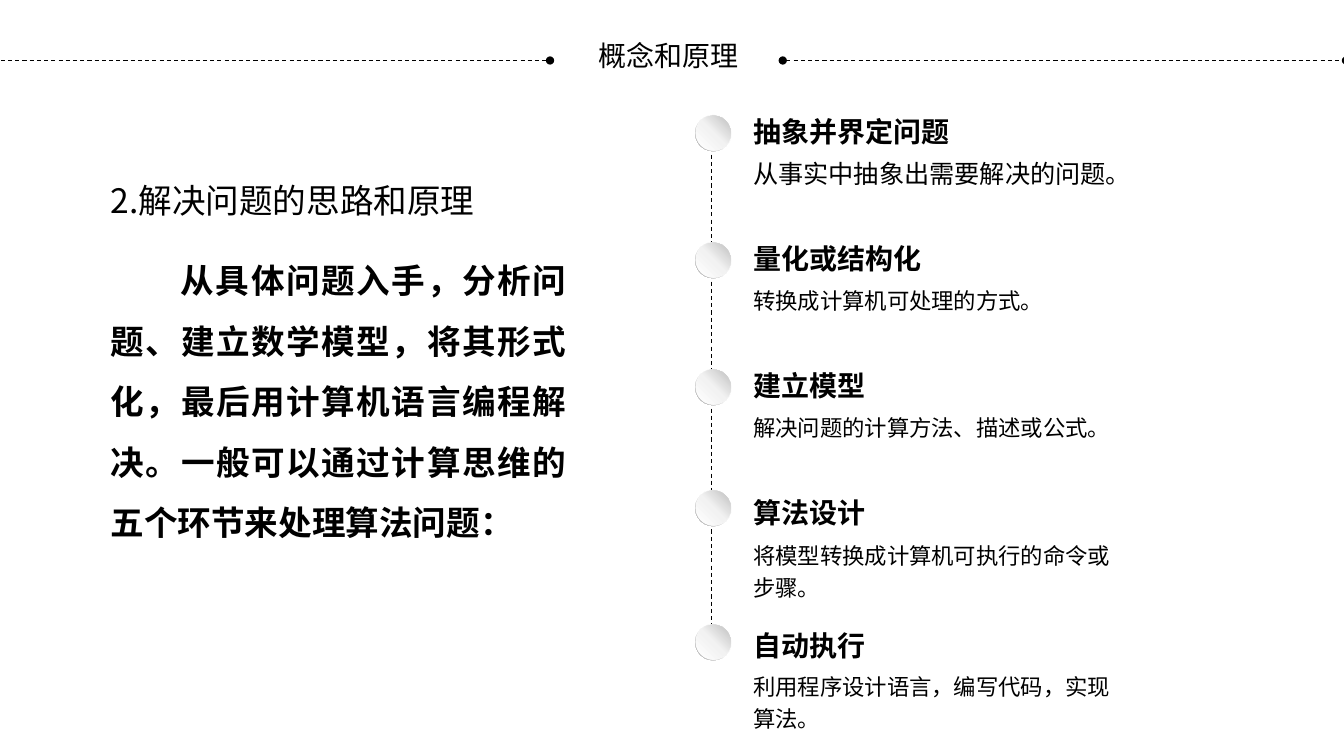
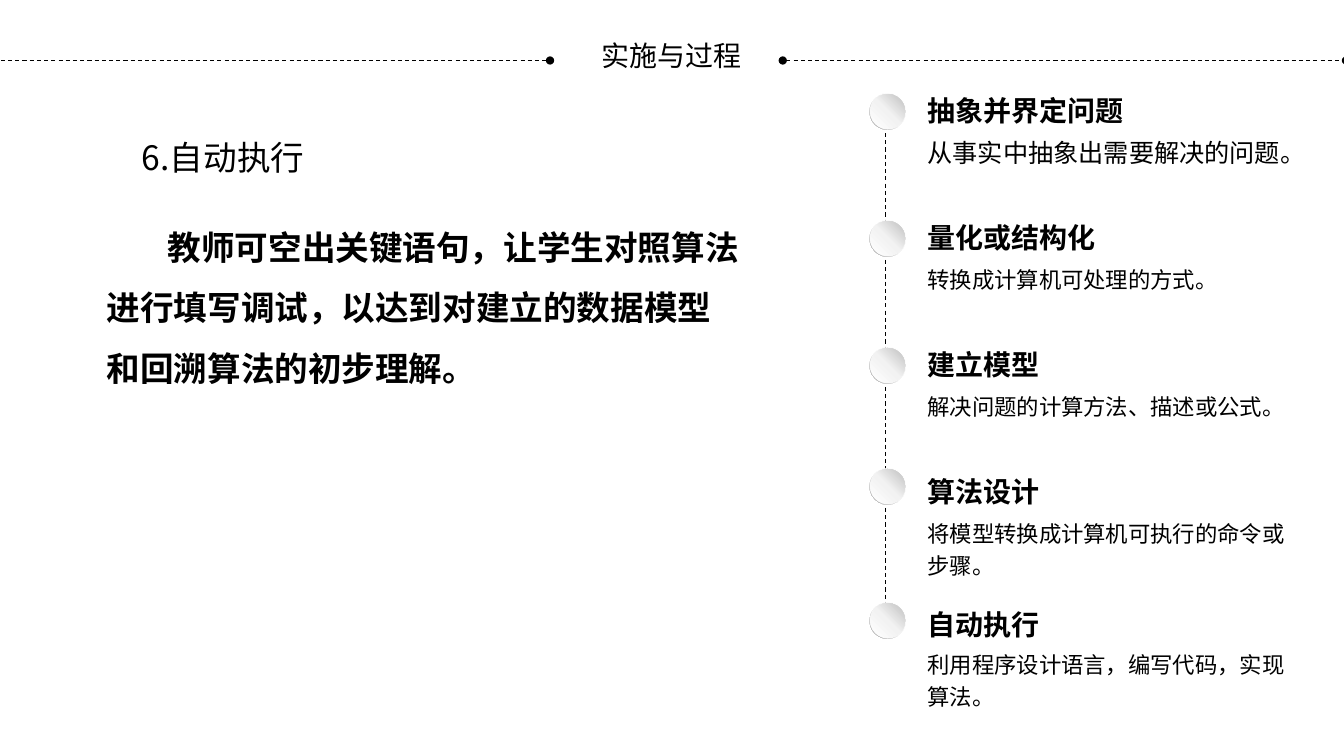
"""Build two lesson slides: a text block beside the five-step problem-solving timeline."""
from lxml import etree
from pptx import Presentation
from pptx.dml.color import RGBColor
from pptx.enum.dml import MSO_LINE
from pptx.enum.lang import MSO_LANGUAGE_ID
from pptx.enum.shapes import MSO_CONNECTOR, MSO_SHAPE
from pptx.enum.text import MSO_ANCHOR, PP_ALIGN
from pptx.oxml.ns import qn
from pptx.util import Pt

STRAIGHT = MSO_CONNECTOR.STRAIGHT
DASH = MSO_LINE.DASH
OVAL, DONUT = MSO_SHAPE.OVAL, MSO_SHAPE.DONUT
TOP, MIDDLE = MSO_ANCHOR.TOP, MSO_ANCHOR.MIDDLE
LEFT, CENTER, JUSTIFY = PP_ALIGN.LEFT, PP_ALIGN.CENTER, PP_ALIGN.JUSTIFY
CHINESE = MSO_LANGUAGE_ID.SIMPLIFIED_CHINESE

COLORS = {"ink": "000000", "white": "FFFFFF", "pale": "F2F2F2",
          "rim": "A6A6A6", "shade": "BFBFBF"}
SANS, BODY_FONT = "Noto Sans CJK SC", "Calibri"

STEPS = [
    ("抽象并界定问题", "从事实中抽象出需要解决的问题。", 18),
    ("量化或结构化", "转换成计算机可处理的方式。", 16),
    ("建立模型", "解决问题的计算方法、描述或公式。", 16),
    ("算法设计", "将模型转换成计算机可执行的命令或步骤。", 16),
    ("自动执行", "利用程序设计语言，编写代码，实现算法。", 16),
]
DOT_TOPS = [0, 90.7, 181.4, 267.8, 363.6]
TITLE_TOPS = [-3.6, 87.1, 177.8, 268.6, 363.6]
DESCRIPTION_GAPS = [26.9, 28.8, 28.8, 28.8, 27.4]
DOT_SIZE = 26

SLIDES = [
    {"title": "概念和原理 ",
     "heading": ("2.解决问题的思路和原理", (72, 125.3, 798, 45)),
     "body": ("从具体问题入手，分析问题、建立数学模型，将其形式化，"
              "最后用计算机语言编程解决。一般可以通过计算思维的五个环节来处理算法问题：",
              (72, 167.8, 339.8, 225.4),
              {"align": JUSTIFY, "indent": 50}),
     "steps_at": (496.8, 82.1)},
    {"title": "实施与过程",
     "heading": ("6.自动执行", (94.3, 94.3, 527, 56)),
     "body": ("教师可空出关键语句，让学生对照算法进行填写调试，"
              "以达到对建立的数据模型和回溯算法的初步理解。",
              (71.3, 144.7, 465.6, 180),
              {"indent": 43.6, "insets": (5, 2.9)}),
     "steps_at": (621.4, 66.7)},
]


def add_text(slide, text, box, size, font=SANS, bold=False, align=LEFT,
             anchor=TOP, spacing=1.0, indent=0, insets=(7.2, 3.6)):
    shape = slide.shapes.add_textbox(*map(Pt, box))
    frame = shape.text_frame
    frame.word_wrap = True
    frame.vertical_anchor = anchor
    frame.margin_left = frame.margin_right = Pt(insets[0])
    frame.margin_top = frame.margin_bottom = Pt(insets[1])
    paragraph = frame.paragraphs[0]
    paragraph.alignment = align
    paragraph.line_spacing = spacing
    if indent:
        paragraph._p.get_or_add_pPr().set("indent", str(Pt(indent)))
    run = paragraph.add_run()
    run.text = text
    run.font.size = Pt(size)
    run.font.bold = bold
    run.font.name = font
    run.font.language_id = CHINESE
    run.font.color.rgb = RGBColor.from_string(COLORS["ink"])
    east_asian = etree.SubElement(run._r.get_or_add_rPr(), qn("a:ea"))
    east_asian.set("typeface", BODY_FONT)


def add_dashed_line(slide, start, end, oval_ends=False):
    connector = slide.shapes.add_connector(STRAIGHT, *map(Pt, start + end))
    connector.line.color.rgb = RGBColor.from_string(COLORS["ink"])
    connector.line.width = Pt(0.75)
    connector.line.dash_style = DASH
    if oval_ends:
        line = connector.line._get_or_add_ln()
        for tag in ("a:headEnd", "a:tailEnd"):
            etree.SubElement(line, qn(tag)).set("type", "oval")
    etree.SubElement(connector._element.spPr, qn("a:effectLst"))


def set_gradient(shape, stops, angle):
    shape.fill.gradient()
    gradient = shape._element.spPr.find(qn("a:gradFill"))
    for child in list(gradient):
        gradient.remove(child)
    stop_list = etree.SubElement(gradient, qn("a:gsLst"))
    for position, color in stops:
        stop = etree.SubElement(stop_list, qn("a:gs"), pos=str(position * 1000))
        etree.SubElement(stop, qn("a:srgbClr"), val=COLORS[color])
    etree.SubElement(gradient, qn("a:lin"), ang=str(angle * 60000), scaled="0")


def add_dot(slide, left, top):
    group = slide.shapes.add_group_shape()
    layers = [
        (DONUT, 0, [(0, "white"), (55, "pale"), (100, "rim")], 135),
        (OVAL, 0.5, [(0, "white"), (51, "pale"), (100, "shade")], 315),
    ]
    for kind, margin, stops, angle in layers:
        size = DOT_SIZE - 2 * margin
        shape = group.shapes.add_shape(
            kind, Pt(left + margin), Pt(top + margin), Pt(size), Pt(size))
        if kind == DONUT:
            shape.adjustments[0] = 0.05
        shape.shadow.inherit = False
        shape.line.fill.background()
        set_gradient(shape, stops, angle)


def add_timeline(slide, left, top):
    for upper, lower in zip(DOT_TOPS, DOT_TOPS[1:]):
        add_dashed_line(slide, (left + 11.5, top + upper + 18),
                        (left + 11.5, top + lower + 5))
    rows = zip(STEPS, DOT_TOPS, TITLE_TOPS, DESCRIPTION_GAPS)
    for (title, description, size), dot_top, title_top, gap in rows:
        add_dot(slide, left, top + dot_top)
        text_left, text_top = left + 34.4, top + title_top
        add_text(slide, title, (text_left, text_top, 272, 31.7), 20, bold=True)
        add_text(slide, description, (text_left, text_top + gap, 272, 54), size,
                 spacing=1.2)


def add_header(slide, title):
    add_text(slide, title, (411.8, 20.9, 136, 36.7), 20, align=CENTER, anchor=MIDDLE)
    for start, end in ((-7.2, 393.1), (559.4, 961.9)):
        add_dashed_line(slide, (start, 43.2), (end, 43.2), oval_ends=True)


def main():
    presentation = Presentation()
    presentation.slide_width, presentation.slide_height = Pt(960.48), Pt(540)
    for content in SLIDES:
        slide = presentation.slides.add_slide(presentation.slide_layouts[6])
        add_header(slide, content["title"])
        heading, box = content["heading"]
        add_text(slide, heading, box, 24)
        body, box, style = content["body"]
        add_text(slide, body, box, 24, font=BODY_FONT, bold=True, spacing=1.5, **style)
        add_timeline(slide, *content["steps_at"])
    presentation.save("out.pptx")


if __name__ == "__main__":
    main()
